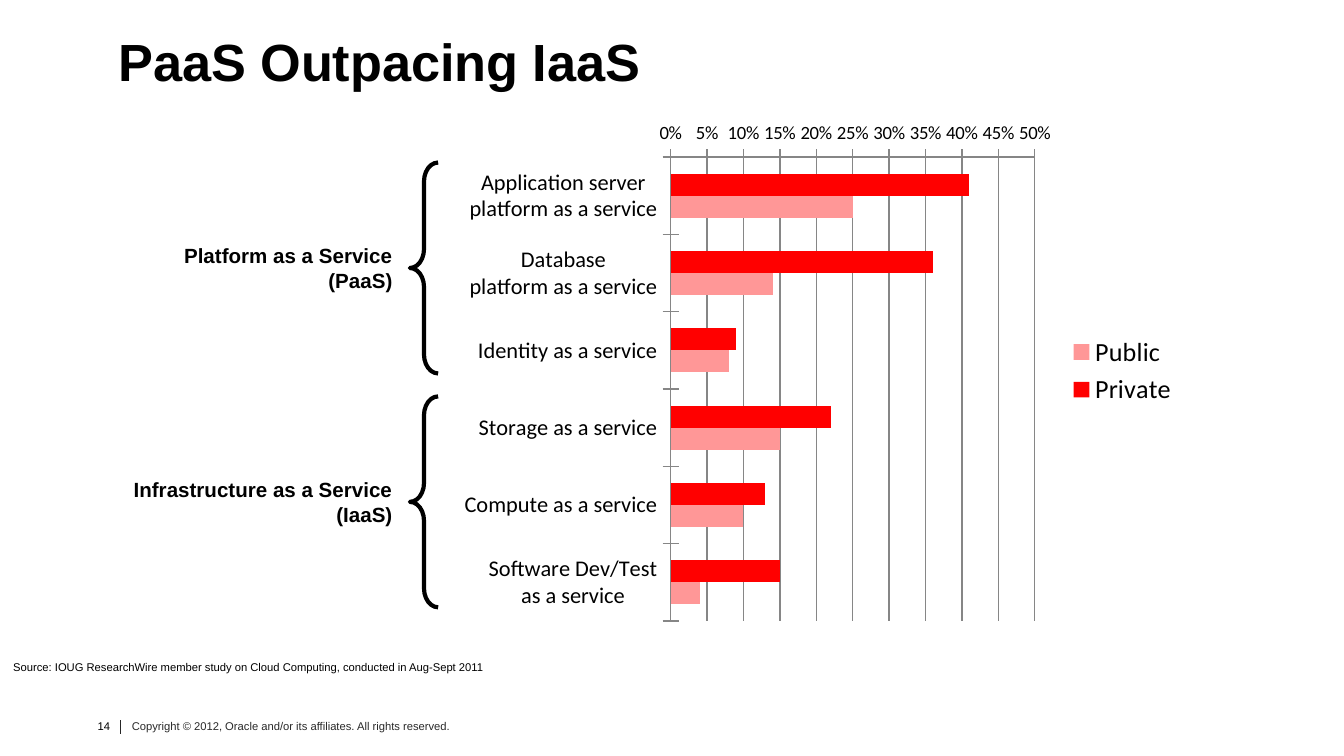
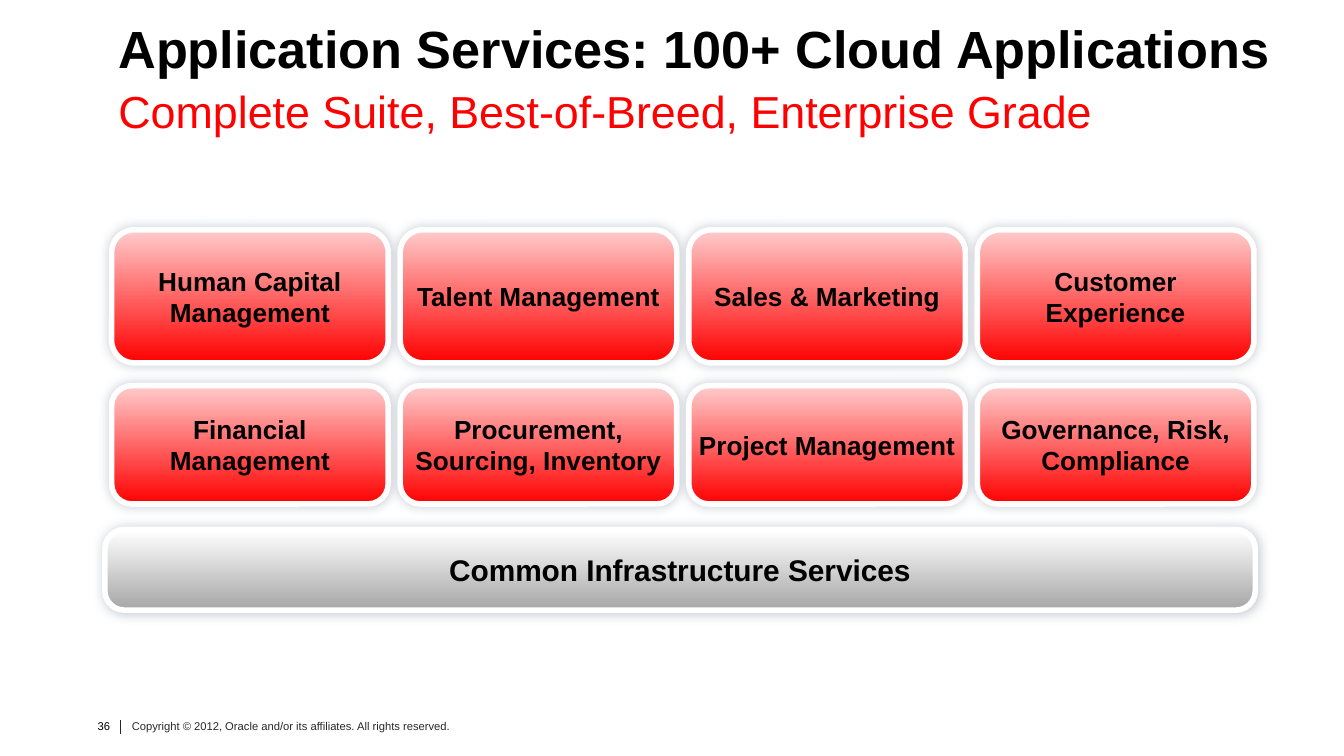
from dataclasses import dataclass

from lxml import etree
from pptx import Presentation
from pptx import util as u
from pptx.chart.data import CategoryChartData
from pptx.dml.color import RGBColor
from pptx.enum import chart as charts, shapes, text
from pptx.oxml import parse_xml
from pptx.oxml.ns import nsdecls, qn

Pt = u.Pt
ALIGN = text.PP_ALIGN
ANCHOR = text.MSO_ANCHOR


@dataclass(frozen=True)
class Theme:
    """Colours, fonts and type sizes shared by the slides."""
    ink: str = "000000"
    footer: str = "292929"
    rule: str = "262626"
    axis: str = "868686"
    red: str = "FF0000"
    pink: str = "FF9797"
    blush: str = "FFCCCC"
    white: str = "FFFFFF"
    grey: str = "A6A6A6"
    shade: str = "5B6981"
    font: str = "Arial"
    chart_font: str = "Calibri"
    title: int = 28
    subtitle: int = 24
    bar: int = 16
    tile: int = 14
    legend: int = 14
    category: int = 12
    group: int = 11
    tick: int = 10
    small: int = 6


THEME = Theme()
DEFAULT_INSETS = (7.2, 3.6, 7.2, 3.6)
NO_INSETS = (0, 0, 0, 0)


def rgb(value):
    """Turn a hex string into a colour."""
    return RGBColor.from_string(value)


def write(shape, content, size, color=THEME.ink, bold=False, align=ALIGN.LEFT,
          anchor=ANCHOR.TOP, insets=DEFAULT_INSETS, wrap=True):
    """Fill a shape with styled text; newlines split paragraphs."""
    frame = shape.text_frame
    frame.word_wrap = wrap
    frame.vertical_anchor = anchor
    (frame.margin_left, frame.margin_top,
     frame.margin_right, frame.margin_bottom) = map(Pt, insets)
    frame.text = content
    for para in frame.paragraphs:
        para.alignment = align
        font = para.font
        font.name, font.size, font.bold = THEME.font, Pt(size), bold
        font.color.rgb = rgb(color)


def add_text(page, box, content, size, **style):
    """Place a text box at left, top, width, height."""
    shape = page.shapes.add_textbox(*map(Pt, box))
    write(shape, content, size, **style)
    return shape


def add_footer(page, number):
    """Place the page number, divider and copyright line."""
    top = 383.8
    add_text(page, (49.7, top, 12.2, 17.3), number, THEME.small,
             align=ALIGN.RIGHT, insets=(0, 1.4, 2.9, 1.4))
    add_text(page, (67.7, top, 195.8, 20.9),
             "Copyright © 2012, Oracle and/or its affiliates. All rights reserved.",
             THEME.small, color=THEME.footer, insets=(2.9, 1.4, 2.9, 1.4))
    divider = page.shapes.add_connector(
        shapes.MSO_CONNECTOR.STRAIGHT, Pt(64.8), Pt(386), Pt(64.8), Pt(393))
    divider.line.color.rgb = rgb(THEME.rule)
    divider.line.width = Pt(0.5)
    etree.SubElement(divider._element.spPr, qn("a:effectLst"))


def add_page(deck, title, title_top, number):
    """Start a slide with its title and footer."""
    page = deck.slides.add_slide(deck.slide_layouts[6])
    add_footer(page, number)
    add_text(page, (63.4, title_top, 640, 33.8), title, THEME.title,
             bold=True, insets=NO_INSETS)
    return page


def style_axis(axis, size):
    """Give a chart axis its ticks, line and label size."""
    axis.major_tick_mark = charts.XL_TICK_MARK.CROSS
    axis.minor_tick_mark = charts.XL_TICK_MARK.NONE
    axis.tick_labels.font.size = Pt(size)
    axis.format.line.color.rgb = rgb(THEME.axis)


def add_adoption_chart(page, box):
    """Place the bar chart of private and public cloud use."""
    data = CategoryChartData(number_format="0%")
    data.categories = [
        "Application server\nplatform as a service",
        "Database\nplatform as a service",
        "Identity as a service",
        "Storage as a service",
        "Compute as a service",
        "Software Dev/Test\nas a service",
    ]
    data.add_series("Private", (0.41, 0.36, 0.09, 0.22, 0.13, 0.15))
    data.add_series("Public", (0.25, 0.14, 0.08, 0.15, 0.10, 0.04))
    chart = page.shapes.add_chart(
        charts.XL_CHART_TYPE.BAR_CLUSTERED, *map(Pt, box), data).chart
    chart.has_title = False
    chart.font.name, chart.font.size = THEME.chart_font, Pt(THEME.tick)
    chart.font.color.rgb = rgb(THEME.ink)

    plot = chart.plots[0]
    plot.gap_width, plot.overlap, plot.vary_by_categories = 150, 0, False
    for series, color in zip(plot.series, (THEME.red, THEME.pink)):
        series.format.fill.solid()
        series.format.fill.fore_color.rgb = rgb(color)

    style_axis(chart.category_axis, THEME.category)
    chart.category_axis.reverse_order = True
    values = chart.value_axis
    style_axis(values, THEME.tick)
    values.minimum_scale, values.maximum_scale, values.major_unit = 0, 0.5, 0.05
    values.tick_labels.number_format = "0%"
    values.tick_labels.number_format_is_linked = False
    values.has_major_gridlines = True
    values.major_gridlines.format.line.color.rgb = rgb(THEME.axis)

    chart.has_legend = True
    chart.legend.position = charts.XL_LEGEND_POSITION.RIGHT
    chart.legend.include_in_layout = False
    chart.legend.font.size = Pt(THEME.legend)
    set_plot_area(chart, x=0.3, y=0.09, w=0.49, h=0.89)


def set_plot_area(chart, **fractions):
    """Fix the inner plot area as fractions of the chart."""
    area = chart._chartSpace.chart.plotArea
    for old in area.findall(qn("c:layout")):
        area.remove(old)
    sizes = "".join(f'<c:{key} val="{value}"/>' for key, value in fractions.items())
    area.insert(0, parse_xml(
        f'<c:layout {nsdecls("c")}><c:manualLayout><c:layoutTarget val="inner"/>'
        f'<c:xMode val="edge"/><c:yMode val="edge"/>{sizes}'
        '</c:manualLayout></c:layout>'))


def add_group_brace(page, box, label, label_width):
    """Place a left brace with its label centred beside it."""
    left, top, width, height = box
    label_height = 33.8
    add_text(page, (left - 2.2 - label_width, top + (height - label_height) / 2,
                    label_width, label_height),
             label, THEME.group, bold=True, align=ALIGN.RIGHT, wrap=False)
    brace = page.shapes.add_shape(shapes.MSO_SHAPE.LEFT_BRACE, *map(Pt, box))
    brace.adjustments[0] = 0.67
    brace.shadow.inherit = False
    brace.fill.background()
    brace.line.color.rgb = rgb(THEME.ink)
    brace.line.width = Pt(2.25)


def add_tile(page, box, label, size, colors, corner=0.17):
    """Place a rounded tile with a vertical gradient and soft shadow."""
    tile = page.shapes.add_shape(
        shapes.MSO_SHAPE.ROUNDED_RECTANGLE, *map(Pt, box))
    tile.adjustments[0] = corner
    tile.fill.gradient()
    tile.fill.gradient_angle = 270
    for stop, position, color in zip(tile.fill.gradient_stops, (0, 1), colors):
        stop.position = position
        stop.color.rgb = rgb(color)
    tile.line.color.rgb = rgb(THEME.white)
    tile.line.width = Pt(3)
    tile.shadow.inherit = False
    effects = tile._element.spPr.find(qn("a:effectLst"))
    effects.append(parse_xml(
        f'<a:outerShdw {nsdecls("a")} blurRad="{Pt(6)}" dist="0" dir="2700000" '
        f'rotWithShape="0"><a:srgbClr val="{THEME.shade}"><a:alpha val="34000"/>'
        '</a:srgbClr></a:outerShdw>'))
    write(tile, label, size, bold=True, align=ALIGN.CENTER,
          anchor=ANCHOR.MIDDLE, insets=NO_INSETS)


def add_tile_row(page, box, labels, gap):
    """Spread equal red tiles across the box."""
    left, top, width, height = box
    tile_width = (width - gap * (len(labels) - 1)) / len(labels)
    for index, label in enumerate(labels):
        add_tile(page, (left + index * (tile_width + gap), top, tile_width, height),
                 label, THEME.tile, (THEME.blush, THEME.red))


def build_adoption_page(deck):
    """Build the slide comparing platform and infrastructure services."""
    page = add_page(deck, "PaaS Outpacing IaaS", 15.8, "14")
    add_text(page, (0, 350, 588, 14.4),
             "Source: IOUG ResearchWire member study on Cloud Computing, "
             "conducted in Aug-Sept 2011", THEME.small)
    add_adoption_chart(page, (239.8, 59, 398.2, 279.4))
    groups = (("Platform as a Service\v(PaaS)", 126.7),
              ("Infrastructure as a Service\v(IaaS)", 154.1))
    for index, (label, width) in enumerate(groups):
        add_group_brace(page, (219.6, 87.1 + 125.3 * index, 15.1, 113), label, width)


def build_applications_page(deck):
    """Build the slide listing the application services."""
    page = add_page(deck, "Application Services: 100+ Cloud Applications", 8.6, "36")
    add_text(page, (63.4, 44.6, 640.8, 25.2),
             "Complete Suite, Best-of-Breed, Enterprise Grade",
             THEME.subtitle, color=THEME.red, insets=NO_INSETS)
    add_tile_row(page, (59.8, 123.1, 612, 71.3),
                 ("Human Capital\nManagement", "Talent Management",
                  "Sales & Marketing", "Customer Experience"), 6.4)
    add_tile_row(page, (59.8, 206.6, 612, 63.4),
                 ("Financial Management", "Procurement, Sourcing, Inventory",
                  "Project Management", "Governance, Risk, Compliance"), 6.4)
    add_tile(page, (56.2, 283.7, 616.3, 43.2), "Common Infrastructure Services",
             THEME.bar, (THEME.white, THEME.grey), corner=0.24)


def main():
    """Build and save the deck."""
    deck = Presentation()
    deck.slide_width, deck.slide_height = Pt(720), Pt(405)
    build_adoption_page(deck)
    build_applications_page(deck)
    deck.save("out.pptx")


if __name__ == "__main__":
    main()
